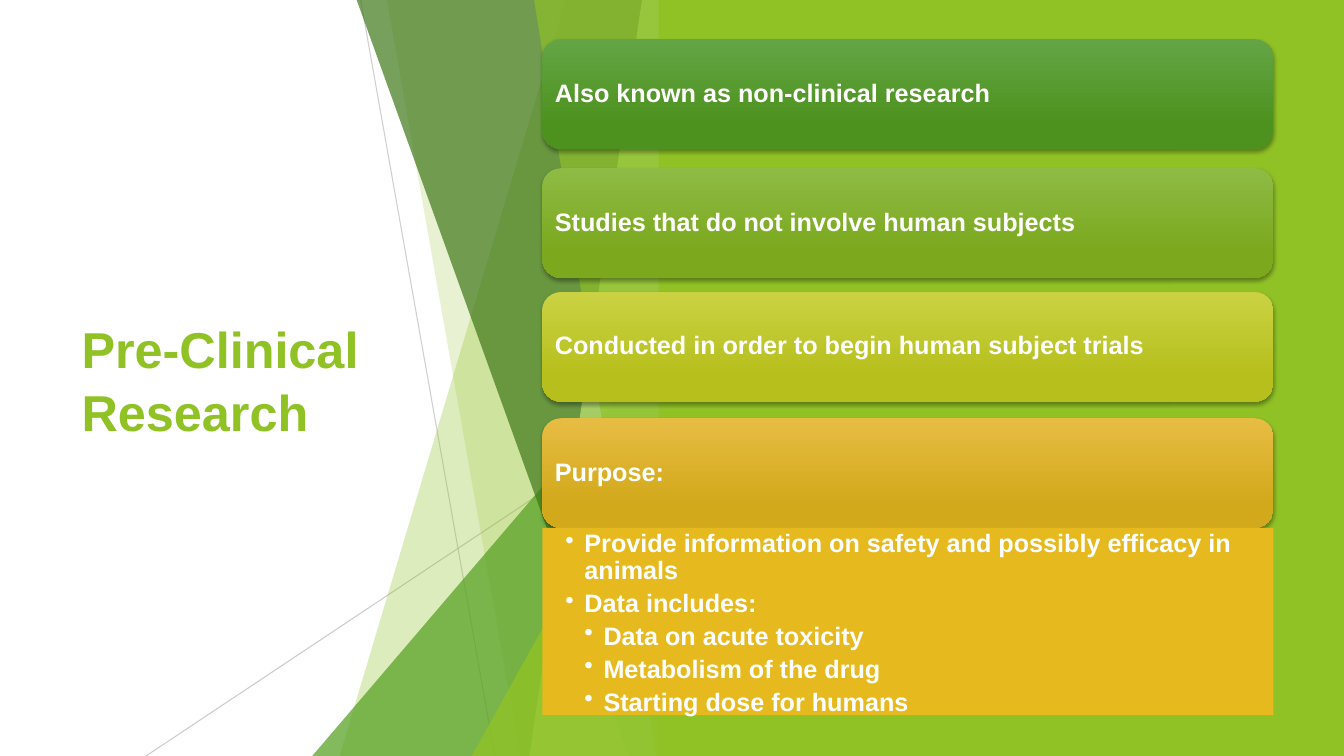
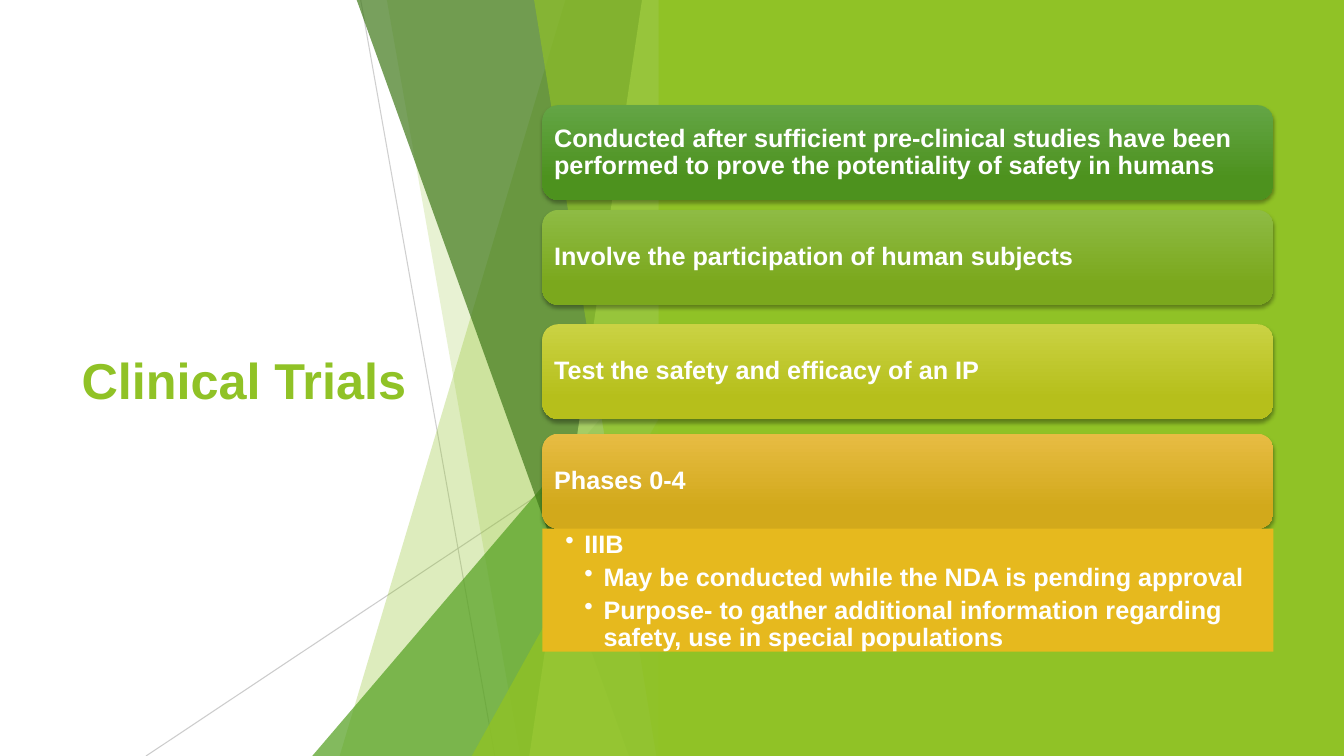
from lxml import etree
from pptx import Presentation
from pptx.dml.color import RGBColor
from pptx.enum.shapes import MSO_CONNECTOR, MSO_SHAPE
from pptx.enum.text import MSO_ANCHOR, PP_ALIGN
from pptx.oxml.ns import qn
from pptx.util import Cm, Pt

STRAIGHT = MSO_CONNECTOR.STRAIGHT
TRIANGLE = MSO_SHAPE.ISOSCELES_TRIANGLE
ROUNDED = MSO_SHAPE.ROUNDED_RECTANGLE
RECTANGLE = MSO_SHAPE.RECTANGLE
MIDDLE, TOP = MSO_ANCHOR.MIDDLE, MSO_ANCHOR.TOP
LEFT = PP_ALIGN.LEFT

# Shared look
WIDTH, HEIGHT = 33.87, 19.05
GREEN, WHITE, GOLD = "90C226", "FFFFFF", "E6B91E"
CARD_GRADIENTS = [("63A545", "4D921E"), ("8EBB44", "7BA81D"),
                  ("CAD243", "B6BF1B"), ("E7BC43", "D2A91B")]
CARD_LEFT, CARD_WIDTH = 13.67, 18.42
PANEL_LEFT = 16.6
FACET_RIGHT = 16.92
TITLE_BOX = {"left": Cm(1.8), "top": Cm(3.84), "width": Cm(9.86), "height": Cm(11.38)}
TITLE_FONT = {"name": "Arial", "size": Pt(36), "bold": True}
BODY_FONT = {"name": "Arial", "size": Pt(18), "bold": True}
CARD_FRAME = {"word_wrap": True, "vertical_anchor": MIDDLE,
              "margin_left": Cm(0.18), "margin_right": Cm(0.18),
              "margin_top": Cm(0.18), "margin_bottom": Cm(0.18)}
DETAIL_FRAME = {"word_wrap": True, "vertical_anchor": TOP,
                "margin_left": Cm(0.58), "margin_right": Cm(0.36),
                "margin_top": Cm(0.08), "margin_bottom": Cm(0.08)}
BULLET_INDENT = 0.48

# Thin lines: x1, y1, x2, y2, opacity
THIN_LINES = [(9.09, 0, 12.47, HEIGHT, 75), (FACET_RIGHT, 10.24, 3.68, HEIGHT, 80)]
# Facets, back to front: top x, top y, bottom x, colour, opacity
FACETS = [
    (14.25, 0, 8.56, GREEN, 30),
    (9.75, 0, 13.11, GREEN, 20),
    (FACET_RIGHT, 8.46, 7.87, "54A021", 72),
    (8.99, 0, 15.85, "3F7819", 70),
    (16.18, 0, 13.34, "C0E474", 70),
    (13.46, 0, 16.54, GREEN, 65),
    (FACET_RIGHT, 9.98, 11.89, GREEN, 80),
]

# Content
TOPICS = [
    {
        "title": "Pre-Clinical Research",
        "card_height": 2.76,
        "cards": [(0.99, "Also known as non-clinical research"),
                  (4.24, "Studies that do not involve human subjects"),
                  (7.36, "Conducted in order to begin human subject trials"),
                  (10.54, "Purpose:")],
        "detail_height": 4.72,
        "details": [(1, "Provide information on safety and possibly efficacy in animals"),
                    (1, "Data includes:"),
                    (2, "Data on acute toxicity"),
                    (2, "Metabolism of the drug"),
                    (2, "Starting dose for humans")],
    },
    {
        "title": "Clinical Trials",
        "card_height": 2.39,
        "cards": [(2.65, "Conducted after sufficient pre-clinical studies have been "
                         "performed to prove the potentiality of safety in humans"),
                  (5.29, "Involve the participation of human subjects"),
                  (8.17, "Test the safety and efficacy of an IP"),
                  (10.93, "Phases 0-4")],
        "detail_height": 3.1,
        "details": [(1, "IIIB"),
                    (2, "May be conducted while the NDA is pending approval"),
                    (2, "Purpose- to gather additional information regarding "
                        "safety, use in special populations")],
    },
]


def paint(fill, *colors, opacity=100):
    """Fill with one colour, or with a downward gradient of two."""
    if len(colors) == 2:
        fill.gradient()
        fill.gradient_angle = 270
        for stop, position, color in zip(fill.gradient_stops, (0, 0.78), colors):
            stop.position = position
            stop.color.rgb = RGBColor.from_string(color)
        return
    fill.solid()
    fill.fore_color.rgb = RGBColor.from_string(colors[0])
    if opacity < 100:
        solid_color = fill._xPr.find(qn("a:solidFill")).find(qn("a:srgbClr"))
        etree.SubElement(solid_color, qn("a:alpha"), val=str(opacity * 1000))


def write(paragraph, text, font_format, color, line_spacing):
    paragraph.text = text
    paragraph.alignment = LEFT
    paragraph.line_spacing = line_spacing
    font = paragraph.runs[0].font
    for attribute, value in font_format.items():
        setattr(font, attribute, value)
    paint(font.fill, color)


deck = Presentation()
deck.slide_width, deck.slide_height = Cm(WIDTH), Cm(HEIGHT)

for topic in TOPICS:
    slide = deck.slides.add_slide(deck.slide_layouts[5])
    shapes = slide.shapes

    # Title
    title = shapes.title
    for attribute, value in TITLE_BOX.items():
        setattr(title, attribute, value)
    title.text_frame.vertical_anchor = MIDDLE
    title.text_frame.word_wrap = True
    write(title.text_frame.paragraphs[0], topic["title"], TITLE_FONT, GREEN, 1.05)

    # Thin lines behind the facets
    for x1, y1, x2, y2, opacity in THIN_LINES:
        thin_line = shapes.add_connector(STRAIGHT, Cm(x1), Cm(y1), Cm(x2), Cm(y2))
        thin_line.line.width = Pt(0.75)
        paint(thin_line.line.fill, "BFBFBF", opacity=opacity)
        etree.SubElement(thin_line._element.spPr, qn("a:effectLst"))

    # Translucent facets
    for top_x, top_y, bottom_x, color, opacity in FACETS:
        if top_y:
            facet = shapes.add_shape(TRIANGLE, Cm(bottom_x), Cm(top_y),
                                     Cm(top_x - bottom_x), Cm(HEIGHT - top_y))
            facet.adjustments[0] = 1
        else:
            outline = shapes.build_freeform(Cm(top_x), 0)
            outline.add_line_segments([(Cm(FACET_RIGHT), 0),
                                       (Cm(FACET_RIGHT), Cm(HEIGHT)),
                                       (Cm(bottom_x), Cm(HEIGHT))])
            facet = outline.convert_to_shape()
        paint(facet.fill, color, opacity=opacity)
        facet.line.fill.background()
        facet.shadow.inherit = False

    # Green panel
    panel = shapes.add_shape(RECTANGLE, Cm(PANEL_LEFT), 0,
                             Cm(WIDTH - PANEL_LEFT), Cm(HEIGHT))
    paint(panel.fill, GREEN)
    panel.line.fill.background()
    panel.shadow.inherit = False

    # Cards
    for (card_top, statement), gradient in zip(topic["cards"], CARD_GRADIENTS):
        card = shapes.add_shape(ROUNDED, Cm(CARD_LEFT), Cm(card_top),
                                Cm(CARD_WIDTH), Cm(topic["card_height"]))
        paint(card.fill, *gradient)
        card.line.fill.background()
        card.shadow.inherit = False
        effects = card._element.spPr.find(qn("a:effectLst"))
        shadow = etree.SubElement(effects, qn("a:outerShdw"), blurRad=str(Pt(3)),
                                  dist=str(Pt(2)), dir="5400000", rotWithShape="0")
        shadow_color = etree.SubElement(shadow, qn("a:srgbClr"), val="000000")
        etree.SubElement(shadow_color, qn("a:alpha"), val="35000")
        for attribute, value in CARD_FRAME.items():
            setattr(card.text_frame, attribute, value)
        write(card.text_frame.paragraphs[0], statement, BODY_FONT, WHITE, 0.9)

    # Details directly under the last card
    detail_top = topic["cards"][-1][0] + topic["card_height"]
    detail = shapes.add_shape(RECTANGLE, Cm(CARD_LEFT), Cm(detail_top),
                              Cm(CARD_WIDTH), Cm(topic["detail_height"]))
    paint(detail.fill, GOLD)
    detail.line.fill.background()
    detail.shadow.inherit = False
    for attribute, value in DETAIL_FRAME.items():
        setattr(detail.text_frame, attribute, value)
    for index, (level, point) in enumerate(topic["details"]):
        if index:
            paragraph = detail.text_frame.add_paragraph()
        else:
            paragraph = detail.text_frame.paragraphs[0]
        write(paragraph, point, BODY_FONT, WHITE, 0.9)
        paragraph.level = level
        paragraph.space_after = Pt(4)
        properties = paragraph._p.get_or_add_pPr()
        properties.set("marL", str(Cm(BULLET_INDENT * level)))
        properties.set("indent", str(-Cm(BULLET_INDENT)))
        etree.SubElement(properties, qn("a:buChar"), char="•")

deck.save("out.pptx")
